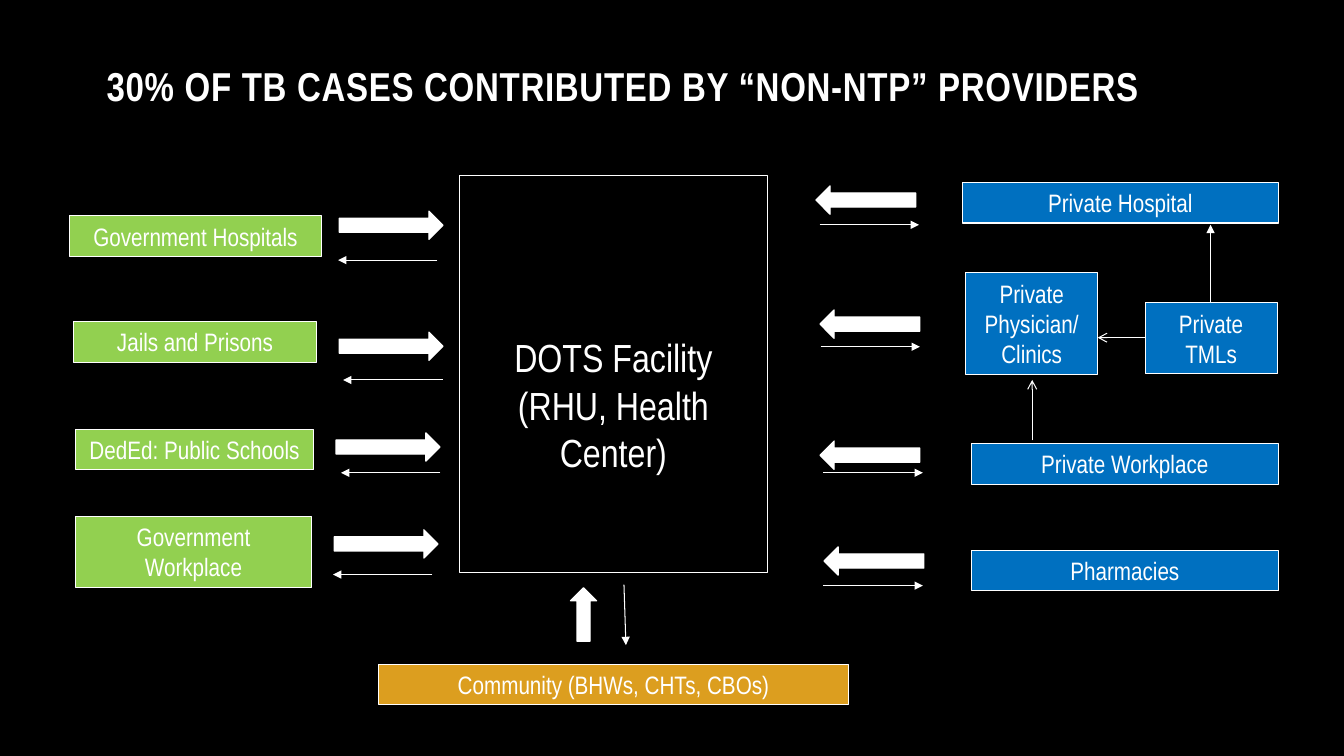
import pptx
import pptx.util
import pptx.dml.color
import pptx.enum.shapes
import pptx.enum.text
import pptx.oxml
import pptx.oxml.ns

Pt = pptx.util.Pt
RGBColor = pptx.dml.color.RGBColor
SHAPE = pptx.enum.shapes.MSO_SHAPE
ANCHOR = pptx.enum.text.MSO_ANCHOR
ALIGN = pptx.enum.text.PP_ALIGN

BLACK = RGBColor(0x00, 0x00, 0x00)
WHITE = RGBColor(0xFF, 0xFF, 0xFF)
BLUE = RGBColor(0x00, 0x70, 0xC0)
GREEN = RGBColor(0x92, 0xD0, 0x50)
GOLD = RGBColor(0xDC, 0x9E, 0x1F)
FONT = "Arial Narrow"

TITLE = "30% OF TB CASES CONTRIBUTED BY “NON-NTP” PROVIDERS"
FACILITY = ("DOTS Facility\n(RHU, Health Center)", 328.3, 125.3, 219.6, 283.7)

PROVIDERS = [
    ("Private Hospital", BLUE, 687.6, 130.3, 225.4, 29),
    ("Private TMLs", BLUE, 817.9, 216, 94.3, 51),
    ("Private Physician/ Clinics", BLUE, 689.8, 194.4, 94.3, 73),
    ("Pharmacies", BLUE, 694, 393.1, 219, 29),
    ("Private Workplace", BLUE, 694, 316.8, 219, 29),
    ("Community (BHWs, CHTs, CBOs)", GOLD, 270.5, 474.5, 335.5, 29),
    ("Government Hospitals", GREEN, 49.7, 154, 180, 29),
    ("Jails and Prisons", GREEN, 52.6, 229.7, 173.5, 29),
    ("DedEd: Public Schools", GREEN, 54, 306.7, 170, 29),
    ("Government Workplace", GREEN, 54, 368.6, 168.5, 51),
]

BLOCK_THICKNESS = 20.2
LEFT_LENGTH, RIGHT_LENGTH = 74.2, 71.3
RETURN_LENGTH = 71
LEFT_PAIRS = [
    ((242.3, 150.8), (312.5, 185.8)),
    ((242.3, 237.2), (316.1, 271.4)),
    ((240.1, 309.2), (314.6, 337.7)),
    ((238.7, 378.4), (308.9, 410.4)),
]
RIGHT_PAIRS = [
    ((582.8, 132.8), (585.4, 160.6)),
    ((585.7, 221.4), (586.1, 247.7)),
    ((585.7, 315), (588.2, 337.7)),
    ((588.6, 390.6), (588.2, 418.3)),
]
LINKS = [
    (864.7, 216, 864.7, 160.6, "triangle"),
    (445.7, 417.6, 447.1, 460.8, "triangle"),
    (737.3, 314.6, 737.3, 271.4, "arrow"),
    (817.9, 241.2, 784.1, 241.2, "arrow"),
]


def add_block(s, kind, x, y, w, h, fill, line_width):
    sp = s.shapes.add_shape(kind, Pt(x), Pt(y), Pt(w), Pt(h))
    sp.shadow.inherit = False
    if fill is None:
        sp.fill.background()
    else:
        sp.fill.solid()
        sp.fill.fore_color.rgb = fill
    sp.line.color.rgb = WHITE
    sp.line.width = Pt(line_width)
    return sp


def format_runs(tf, size, align):
    for p in tf.paragraphs:
        p.alignment = align
        for r in p.runs:
            r.font.name = FONT
            r.font.size = Pt(size)
            r.font.color.rgb = WHITE


def add_box(s, text, fill, x, y, w, h, size):
    tf = add_block(s, SHAPE.RECTANGLE, x, y, w, h, fill, 0.75).text_frame
    tf.word_wrap = True
    tf.vertical_anchor = ANCHOR.MIDDLE
    tf.text = text
    format_runs(tf, size, ALIGN.CENTER)
    return tf


def add_link(s, x1, y1, x2, y2, head):
    c = s.shapes.add_connector(pptx.enum.shapes.MSO_CONNECTOR.STRAIGHT,
                               Pt(x1), Pt(y1), Pt(x2), Pt(y2))
    c.line.color.rgb = WHITE
    c.line.width = Pt(0.75)
    ns = pptx.oxml.ns.nsdecls("a")
    ln = c.line._get_or_add_ln()
    ln.append(pptx.oxml.parse_xml(f'<a:tailEnd {ns} type="{head}"/>'))
    c._element.spPr.append(pptx.oxml.parse_xml(f"<a:effectLst {ns}/>"))


def add_exchanges(s, pairs, kind, length, step):
    for (x, y), (line_x, line_y) in pairs:
        add_block(s, kind, x, y, length, BLOCK_THICKNESS, WHITE, 0.85)
        add_link(s, line_x, line_y, line_x + step, line_y, "triangle")


def main():
    prs = pptx.Presentation()
    prs.slide_width, prs.slide_height = Pt(960), Pt(540)
    s = prs.slides.add_slide(prs.slide_layouts[5])
    s.background.fill.solid()
    s.background.fill.fore_color.rgb = BLACK

    title = s.shapes.title
    title.left, title.top, title.width, title.height = Pt(69), Pt(15.8), Pt(832.3), Pt(66.2)
    tf = title.text_frame
    tf.text = TITLE
    tf.word_wrap = True
    tf.auto_size = pptx.enum.text.MSO_AUTO_SIZE.NONE
    tf.vertical_anchor = ANCHOR.BOTTOM
    format_runs(tf, 28.8, ALIGN.LEFT)
    font = tf.paragraphs[0].runs[0].font
    font.bold = True
    font._element.set("spc", "50")

    text, *place = FACILITY
    add_box(s, text, None, *place, 28).margin_top = Pt(47)
    for provider in PROVIDERS:
        add_box(s, *provider, 18)

    add_exchanges(s, LEFT_PAIRS, SHAPE.RIGHT_ARROW, LEFT_LENGTH, -RETURN_LENGTH)
    add_exchanges(s, RIGHT_PAIRS, SHAPE.LEFT_ARROW, RIGHT_LENGTH, RETURN_LENGTH)
    add_block(s, SHAPE.UP_ARROW, 407.5, 419.8, 18.7, 38.2, WHITE, 0.85)
    for link in LINKS:
        add_link(s, *link)

    prs.save("out.pptx")


if __name__ == "__main__":
    main()
